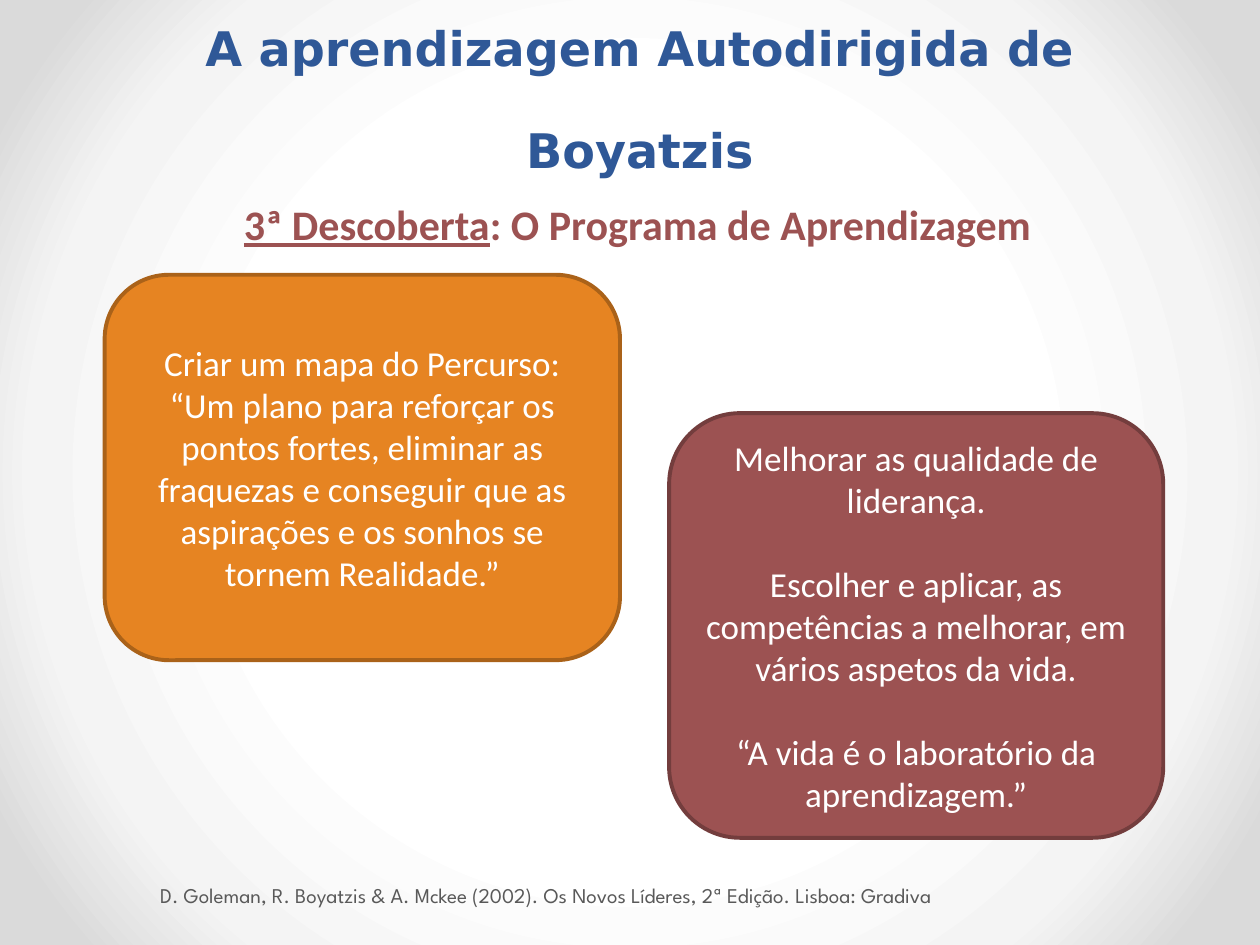
from dataclasses import dataclass

from lxml import etree
from pptx import Presentation
from pptx.dml.color import RGBColor
from pptx.enum.shapes import MSO_SHAPE
from pptx.enum.text import MSO_ANCHOR, PP_ALIGN
from pptx.oxml.ns import qn
from pptx.util import Cm, Pt

ROUNDED = MSO_SHAPE.ROUNDED_RECTANGLE
MIDDLE, BOTTOM = MSO_ANCHOR.MIDDLE, MSO_ANCHOR.BOTTOM
LEFT, CENTER = PP_ALIGN.LEFT, PP_ALIGN.CENTER


@dataclass(frozen=True)
class Theme:
    blue: str = "2F5897"
    orange: str = "E68422"
    orange_edge: str = "AA6219"
    red: str = "9C5252"
    red_edge: str = "733D3D"
    white: str = "FFFFFF"
    grey: str = "595959"
    backdrop: tuple = ((50, "FFFFFF"), (76, "F4F4F4"), (92, "DADADA"))
    title_font: str = "DejaVu Sans"
    body_font: str = "Calibri"
    source_font: str = "League Spartan"
    title_size: float = 27.2
    subtitle_size: float = 24
    body_size: float = 20
    source_size: float = 12
    heading_leading: float = 58


THEME = Theme()


@dataclass(frozen=True)
class Box:
    left: float
    top: float
    width: float
    height: float

    def inner(self, left, top, width, height):
        return Box(self.left + left, self.top + top, width, height)

    def lengths(self):
        return [Cm(n) for n in (self.left, self.top, self.width, self.height)]


def write_text(frame, paragraphs, *, font, size, color, bold=False, align=CENTER,
               anchor=MIDDLE, leading=None, gap=0, underlined=""):
    frame.word_wrap = True
    frame.vertical_anchor = anchor
    for index, wording in enumerate(paragraphs):
        paragraph = frame.add_paragraph() if index else frame.paragraphs[0]
        paragraph.alignment = align
        if leading:
            paragraph.line_spacing = Pt(leading)
        if index and gap:
            paragraph.space_before = Pt(gap)
        for part, underline in ((underlined, True), (wording, False)):
            if not part:
                continue
            run = paragraph.add_run()
            run.text = part
            run.font.name = font
            run.font.size = Pt(size)
            run.font.bold = bold
            run.font.underline = underline
            run.font.color.rgb = RGBColor.from_string(color)


def paint_background(slide):
    slide.background.fill.gradient()
    gradient = slide.element.find(".//" + qn("a:gradFill"))
    for child in list(gradient):
        gradient.remove(child)
    stops = etree.SubElement(gradient, qn("a:gsLst"))
    for percent, color in THEME.backdrop:
        stop = etree.SubElement(stops, qn("a:gs"), pos=str(percent * 1000))
        etree.SubElement(stop, qn("a:srgbClr"), val=color)
    circle = etree.SubElement(gradient, qn("a:path"), {"path": "circle"})
    etree.SubElement(circle, qn("a:fillToRect"),
                     dict.fromkeys("ltrb", "50000"))


def add_header(slide, box):
    subtitle = slide.shapes.add_textbox(*box.inner(0, 2.87, 22.86, 1.75).lengths())
    write_text(subtitle.text_frame, [": O Programa de Aprendizagem"],
               underlined="3ª Descoberta", font=THEME.body_font,
               size=THEME.subtitle_size, color=THEME.red, bold=True,
               anchor=BOTTOM, leading=THEME.heading_leading)
    title = slide.shapes.add_textbox(*box.inner(0.05, 0, 22.86, 3.18).lengths())
    write_text(title.text_frame, ["A aprendizagem Autodirigida de Boyatzis"],
               font=THEME.title_font, size=THEME.title_size, color=THEME.blue,
               bold=True, anchor=BOTTOM, leading=THEME.heading_leading)


def add_card(slide, box, paragraphs, fill, edge, gap=0):
    card = slide.shapes.add_shape(ROUNDED, *box.lengths())
    card.shadow.inherit = False
    card.fill.solid()
    card.fill.fore_color.rgb = RGBColor.from_string(fill)
    card.line.color.rgb = RGBColor.from_string(edge)
    card.line.width = Pt(2.25)
    write_text(card.text_frame, paragraphs, font=THEME.body_font,
               size=THEME.body_size, color=THEME.white, gap=gap)


def add_source(slide, box):
    source = slide.shapes.add_textbox(*box.lengths())
    source.text_frame.margin_left = Cm(0.13)
    write_text(source.text_frame,
               ["D. Goleman, R. Boyatzis & A. Mckee (2002). "
                "Os Novos Líderes, 2ª Edição. Lisboa: Gradiva"],
               font=THEME.source_font, size=THEME.source_size,
               color=THEME.grey, align=LEFT)


def main():
    deck = Presentation()
    deck.slide_width, deck.slide_height = Cm(25.4), Cm(19.05)
    slide = deck.slides.add_slide(deck.slide_layouts[6])
    paint_background(slide)
    add_card(slide, Box(2.11, 5.54, 10.39, 7.77),
             ["Criar um mapa do Percurso:",
              "“Um plano para reforçar os pontos fortes, eliminar as fraquezas "
              "e conseguir que as aspirações e os sonhos se tornem Realidade.”"],
             THEME.orange, THEME.orange_edge)
    add_card(slide, Box(13.49, 8.33, 9.96, 8.56),
             ["Melhorar as qualidade de liderança.",
              "Escolher e aplicar, as competências a melhorar, "
              "em vários aspetos da vida.",
              "“A vida é o laboratório da aprendizagem.”"],
             THEME.red, THEME.red_edge, gap=24)
    add_source(slide, Box(3.1, 17.53, 20.68, 1.02))
    add_header(slide, Box(1.42, 0.53, 22.91, 4.62))
    deck.save("out.pptx")


if __name__ == "__main__":
    main()
